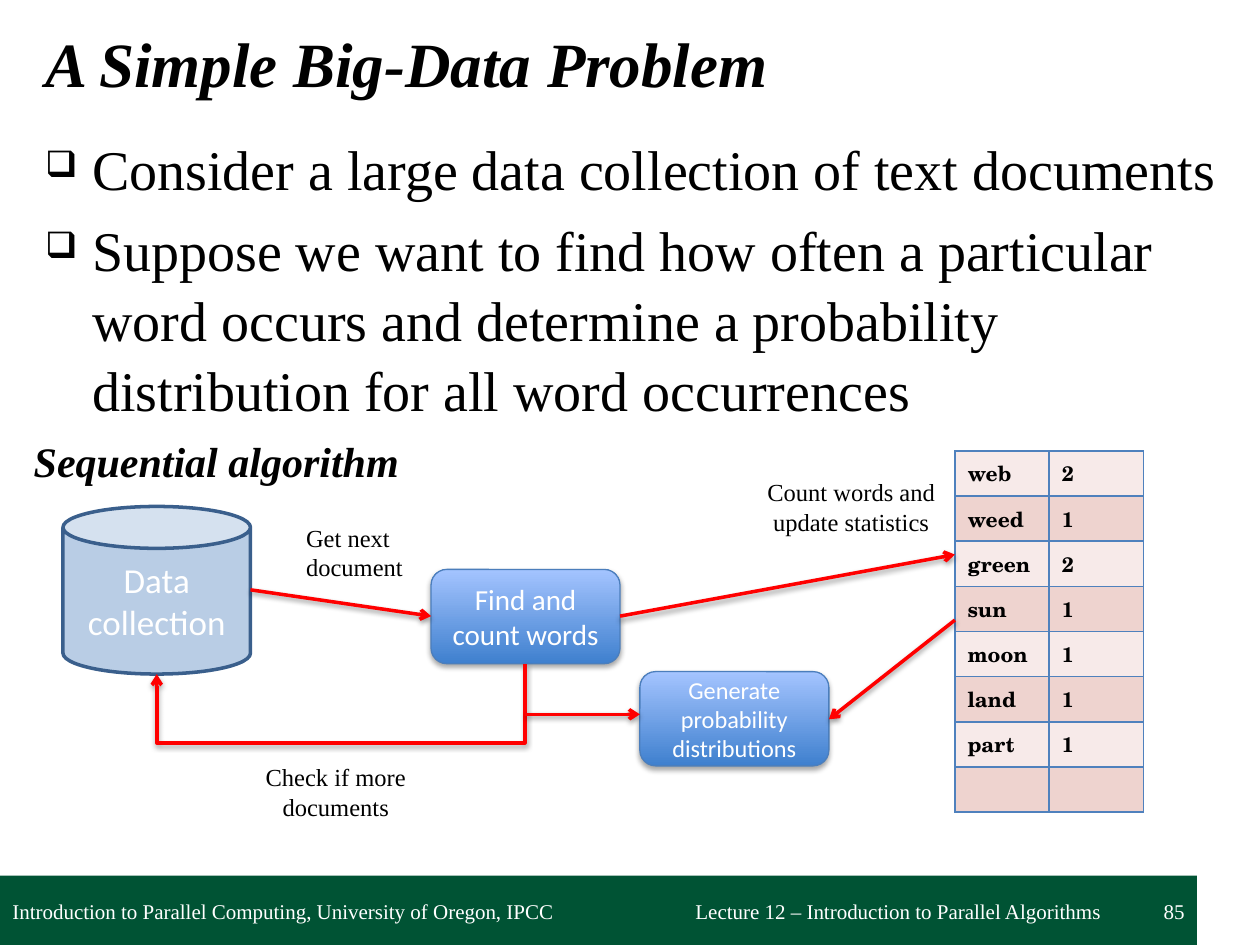
from lxml import etree
from pptx import Presentation, util as u
from pptx.dml.color import RGBColor
from pptx.enum import shapes, text
from pptx.oxml import ns

BLACK = RGBColor(0, 0, 0)
WHITE = RGBColor(255, 255, 255)
GREEN = RGBColor(0x00, 0x53, 0x34)
RED = RGBColor(255, 0, 0)
CAN_FILL = RGBColor(0xB9, 0xCD, 0xE5)
CAN_EDGE = RGBColor(0x3A, 0x5F, 0x8C)
STEP_DARK = RGBColor(0x3F, 0x80, 0xCE)
STEP_LIGHT = RGBColor(0xA4, 0xC4, 0xFF)
STEP_EDGE = RGBColor(0x4B, 0x7E, 0xBC)
GRID = RGBColor(0x4F, 0x81, 0xBD)
BANDS = (RGBColor(0xF7, 0xEA, 0xE9), RGBColor(0xEE, 0xD3, 0xCF))

LEFT, CENTER, RIGHT = text.PP_ALIGN.LEFT, text.PP_ALIGN.CENTER, text.PP_ALIGN.RIGHT
TOP, MIDDLE = text.MSO_ANCHOR.TOP, text.MSO_ANCHOR.MIDDLE


def add_xml(parent, tag, **attributes):
    return etree.SubElement(parent, ns.qn(tag), attributes)


def cms(values):
    return [u.Cm(value) for value in values]


class Slide:
    serif, sans, table_font = "Times New Roman", "Calibri", "TeX Gyre Schola"

    def __init__(self, deck):
        self.shapes = deck.slides.add_slide(deck.slide_layouts[6]).shapes

    def set_words(self, frame, words, size, font, color, align=LEFT, anchor=TOP, bold=False, italic=False):
        frame.text = words
        frame.word_wrap = True
        frame.vertical_anchor = anchor
        for paragraph in frame.paragraphs:
            paragraph.alignment = align
            for run in paragraph.runs:
                run.font.size = u.Pt(size)
                run.font.name = font
                run.font.color.rgb = color
                run.font.bold = bold
                run.font.italic = italic

    def label(self, place, words, size=14, color=BLACK, **style):
        frame = self.shapes.add_textbox(*cms(place)).text_frame
        self.set_words(frame, words, size, self.serif, color, **style)
        return frame

    def footer(self, place, words, align=LEFT):
        frame = self.label(place, words, 12, WHITE, align=align, anchor=MIDDLE)
        frame.margin_top = frame.margin_bottom = u.Cm(0.25)

    def bullets(self, place, points):
        frame = self.label(place, "\n".join(points), 32)
        for index, paragraph in enumerate(frame.paragraphs):
            paragraph.line_spacing = 1.04
            if index:
                paragraph.space_before = u.Pt(6.4)
            props = paragraph._p.get_or_add_pPr()
            props.set("marL", str(u.Cm(0.95)))
            props.set("indent", str(-u.Cm(0.95)))
            add_xml(props, "a:buSzPct", val="65000")
            add_xml(props, "a:buChar", char="❑")

    def block(self, kind, place, fill, edge=None, width=0):
        block = self.shapes.add_shape(kind, *cms(place))
        block.shadow.inherit = False
        if fill:
            block.fill.solid()
            block.fill.fore_color.rgb = fill
        if edge:
            block.line.color.rgb = edge
            block.line.width = u.Pt(width)
        else:
            block.line.fill.background()
        return block

    def cast_shadow(self, shape, alpha, distance):
        props = shape._element.spPr
        effects = props.find(ns.qn("a:effectLst"))
        if effects is None:
            effects = add_xml(props, "a:effectLst")
        shadow = add_xml(effects, "a:outerShdw", blurRad=str(u.Pt(3.1)), dist=str(u.Pt(distance)),
                         dir="5400000", rotWithShape="0")
        add_xml(add_xml(shadow, "a:srgbClr", val=str(BLACK)), "a:alpha", val=str(alpha * 1000))

    def store(self, place, words):
        can = self.block(shapes.MSO_SHAPE.CAN, place, CAN_FILL, CAN_EDGE, 2)
        self.set_words(can.text_frame, words, 20, self.sans, WHITE, CENTER, MIDDLE)

    def step(self, left, top, words, size):
        step = self.block(shapes.MSO_SHAPE.ROUNDED_RECTANGLE, (left, top, 3.81, 1.9), None, STEP_EDGE, 0.75)
        step.fill.gradient()
        step.fill.gradient_angle = 90
        for stop, color in zip(step.fill.gradient_stops, (STEP_DARK, STEP_LIGHT)):
            stop.color.rgb = color
        self.cast_shadow(step, 35, 1.8)
        self.set_words(step.text_frame, words, size, self.sans, WHITE, CENTER, MIDDLE)

    def arrow(self, ends, kind=shapes.MSO_CONNECTOR.STRAIGHT):
        arrow = self.shapes.add_connector(kind, *cms(ends))
        arrow.line.color.rgb = RED
        arrow.line.width = u.Pt(2)
        add_xml(arrow.line._get_or_add_ln(), "a:tailEnd", type="arrow")
        self.cast_shadow(arrow, 38, 1.6)
        return arrow

    def loop_back(self, ends, bend):
        props = self.arrow(ends, shapes.MSO_CONNECTOR.ELBOW)._element.spPr
        props.find(ns.qn("a:xfrm")).set("rot", "5400000")
        guides = props.find(ns.qn("a:prstGeom")).find(ns.qn("a:avLst"))
        add_xml(guides, "a:gd", name="adj1", fmla=f"val {bend}")

    def counts(self, left, top, entries):
        column, row = 1.9, 0.91
        size = (2 * column, row * len(entries))
        table = self.shapes.add_table(len(entries), 2, *cms((left, top, *size))).table
        table.first_row = table.horz_banding = False
        for line in table.rows:
            line.height = u.Cm(row)
        for index, entry in enumerate(entries):
            for position, words in enumerate(entry):
                cell = table.cell(index, position)
                self.set_words(cell.text_frame, words, 12, self.table_font, BLACK, bold=True)
                cell.vertical_anchor = MIDDLE
                if not words:
                    add_xml(cell.text_frame.paragraphs[0]._p, "a:endParaRPr", sz="1200")
                props = cell._tc.get_or_add_tcPr()
                for side in "LRTB":
                    border = add_xml(props, f"a:ln{side}", w=str(u.Pt(1)))
                    add_xml(add_xml(border, "a:solidFill"), "a:srgbClr", val=str(GRID))
                cell.fill.solid()
                cell.fill.fore_color.rgb = BANDS[index % 2]


def main():
    deck = Presentation()
    deck.slide_width, deck.slide_height = cms((25.4, 19.05))
    slide = Slide(deck)

    slide.block(shapes.MSO_SHAPE.RECTANGLE, (0, 17.65, 24.13, 1.4), GREEN)
    slide.footer((13.77, 17.7, 8.89, 1.35), "Lecture 12 – Introduction to Parallel Algorithms")
    slide.label((0.66, 0.03, 24.74, 2.44), "A Simple Big-Data Problem", 36,
                anchor=MIDDLE, bold=True, italic=True)
    slide.bullets((0.66, 2.54, 24.74, 15.2), (
        "Consider a large data collection of text documents",
        "Suppose we want to find how often a particular word occurs and determine "
        "a probability distribution for all word occurrences",
    ))
    slide.footer((18.21, 17.7, 5.92, 1.35), "85", RIGHT)

    slide.store((1.27, 10.21, 3.78, 3.38), "Data\ncollection")
    slide.counts(19.25, 9.09, (
        ("web", "2"), ("weed", "1"), ("green", "2"), ("sun", "1"),
        ("moon", "1"), ("land", "1"), ("part", "1"), ("", ""),
    ))
    slide.step(8.69, 11.48, "Find and count words", 16.6)
    slide.step(12.9, 13.54, "Generate probability distributions", 13.9)

    slide.loop_back((6.77, 9.78, 6.97, 17.2), 793500)
    for ends in ((5.05, 11.89, 8.69, 12.42), (12.5, 12.42, 19.25, 11.18),
                 (10.59, 14.4, 12.9, 14.4), (19.25, 12.5, 16.71, 14.5)):
        slide.arrow(ends)

    slide.label((5.92, 10.41, 2.74, 1.45), "Get next document")
    slide.label((15.04, 9.5, 4.24, 1.45), "Count words and update statistics", align=CENTER)
    slide.label((4.65, 15.24, 4.24, 1.45), "Check if more documents", align=CENTER)
    slide.label((0.43, 8.66, 8.18, 1.27), "Sequential algorithm", 24, bold=True, italic=True)
    slide.footer((0, 17.7, 16.71, 1.35), "Introduction to Parallel Computing, University of Oregon, IPCC")

    deck.save("out.pptx")


if __name__ == "__main__":
    main()
